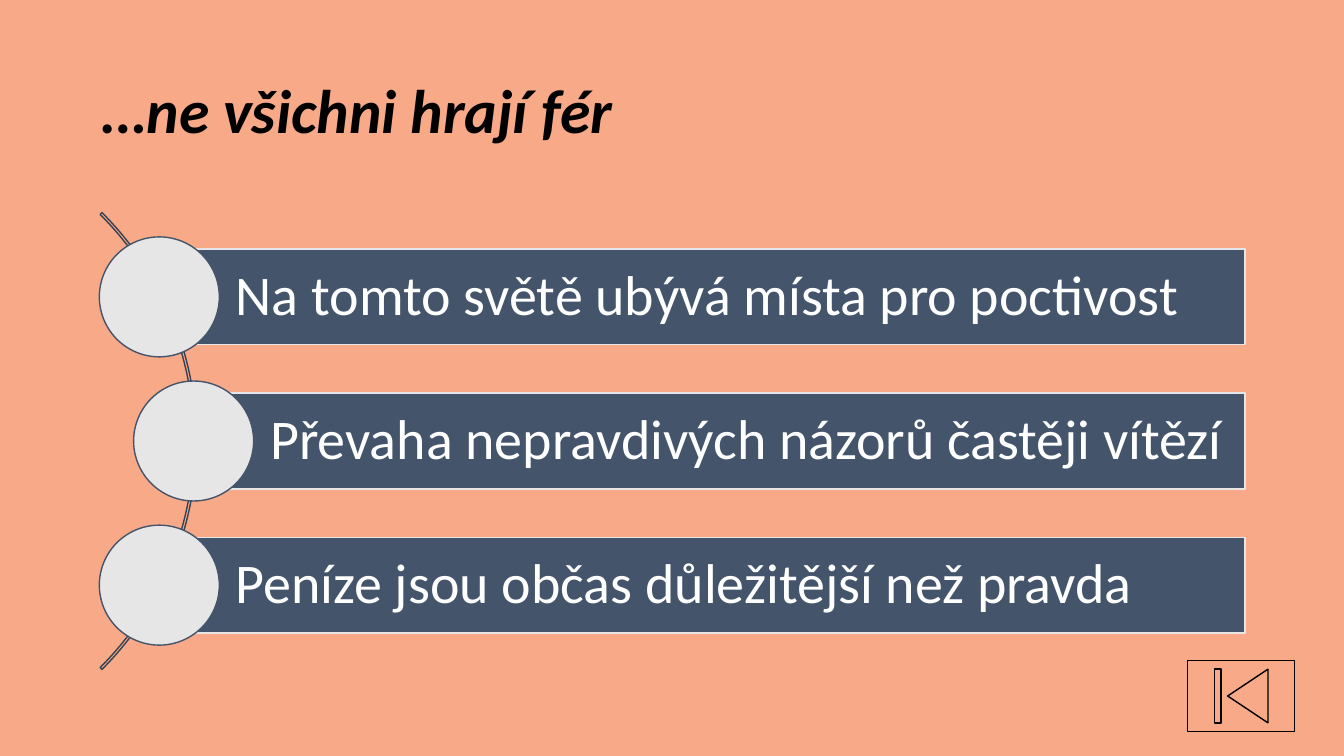
from dataclasses import dataclass
from typing import Any

from pptx import Presentation
from pptx.dml.color import RGBColor
from pptx.enum.shapes import MSO_SHAPE
from pptx.enum.text import MSO_ANCHOR, PP_ALIGN
from pptx.shapes.autoshape import Shape
from pptx.slide import Slide
from pptx.text.text import TextFrame
from pptx.util import Inches, Pt

COLORS = {
    "background": "F7A988",
    "bar": "44546A",
    "light": "E7E6E6",
    "arc": "364355",
    "white": "FFFFFF",
    "black": "000000",
}
BAR_RIGHT, BAR_HEIGHT = 12.35, 0.95
FIRST_BAR_TOP, BAR_PITCH = 2.47, 1.43
CIRCLE_SIZE = 1.19

FRAME_FORMAT = {"word_wrap": True, "vertical_anchor": MSO_ANCHOR.MIDDLE}
BAR_MARGINS = {
    "margin_left": Inches(0.76),
    "margin_top": Inches(0.11),
    "margin_right": Inches(0.11),
    "margin_bottom": Inches(0.11),
}
PARAGRAPH_FORMAT = {"alignment": PP_ALIGN.LEFT, "line_spacing": 0.9}
TITLE_FONT = {"name": "Calibri", "size": Pt(44), "bold": True, "italic": True}
BAR_FONT = {"name": "Calibri", "size": Pt(40)}


@dataclass(frozen=True)
class Statement:
    text: str
    bar_left: float


STATEMENTS = [
    Statement("Na tomto světě ubývá místa pro poctivost", 1.58),
    Statement("Převaha nepravdivých názorů častěji vítězí", 1.92),
    Statement("Peníze jsou občas důležitější než pravda", 1.58),
]


def rgb(color: str) -> RGBColor:
    return RGBColor.from_string(COLORS[color])


def apply(target: Any, values: dict[str, Any]) -> None:
    for attribute, value in values.items():
        setattr(target, attribute, value)


def write(frame: TextFrame, text: str, font: dict[str, Any], color: str) -> None:
    apply(frame, FRAME_FORMAT)
    paragraph = frame.paragraphs[0]
    apply(paragraph, PARAGRAPH_FORMAT)
    run = paragraph.add_run()
    run.text = text
    apply(run.font, font)
    run.font.color.rgb = rgb(color)


def draw(slide: Slide, preset: MSO_SHAPE, box: tuple[float, float, float, float],
         line: str, fill: str | None = None) -> Shape:
    """Add a preset shape with a 1 pt outline; without a fill it is see-through."""
    shape = slide.shapes.add_shape(preset, *map(Inches, box))
    shape.shadow.inherit = False
    shape.line.color.rgb = rgb(line)
    shape.line.width = Pt(1)
    if fill:
        shape.fill.solid()
        shape.fill.fore_color.rgb = rgb(fill)
    else:
        shape.fill.background()
    return shape


def add_title(slide: Slide, text: str) -> None:
    title = slide.shapes.title
    apply(title, {"left": Inches(0.92), "top": Inches(0.4),
                  "width": Inches(11.5), "height": Inches(1.45)})
    write(title.text_frame, text, TITLE_FONT, "black")


def add_arc(slide: Slide) -> None:
    arc = draw(slide, MSO_SHAPE.BLOCK_ARC, (-4.46, 1.17, 6.41, 6.41), "arc")
    for index, value in enumerate((189, 27, 0.004)):
        arc.adjustments[index] = value


def add_statement(slide: Slide, statement: Statement, top: float) -> None:
    """Add a bar with its text and a circle centred on the bar's left edge."""
    left = statement.bar_left
    bar = draw(slide, MSO_SHAPE.RECTANGLE,
               (left, top, BAR_RIGHT - left, BAR_HEIGHT), "light", "bar")
    apply(bar.text_frame, BAR_MARGINS)
    write(bar.text_frame, statement.text, BAR_FONT, "white")
    circle_top = top + (BAR_HEIGHT - CIRCLE_SIZE) / 2
    draw(slide, MSO_SHAPE.OVAL,
         (left - CIRCLE_SIZE / 2, circle_top, CIRCLE_SIZE, CIRCLE_SIZE), "bar", "light")


def main() -> None:
    presentation = Presentation()
    presentation.slide_width = Inches(13.33)
    presentation.slide_height = Inches(7.5)
    slide = presentation.slides.add_slide(
        presentation.slide_layouts.get_by_name("Title Only"))
    slide.background.fill.solid()
    slide.background.fill.fore_color.rgb = rgb("background")

    add_title(slide, "…ne všichni hrají fér")
    add_arc(slide)
    for row, statement in enumerate(STATEMENTS):
        add_statement(slide, statement, FIRST_BAR_TOP + row * BAR_PITCH)
    draw(slide, MSO_SHAPE.ACTION_BUTTON_BEGINNING, (11.78, 6.55, 1.06, 0.71), "black")
    presentation.save("out.pptx")


if __name__ == "__main__":
    main()
